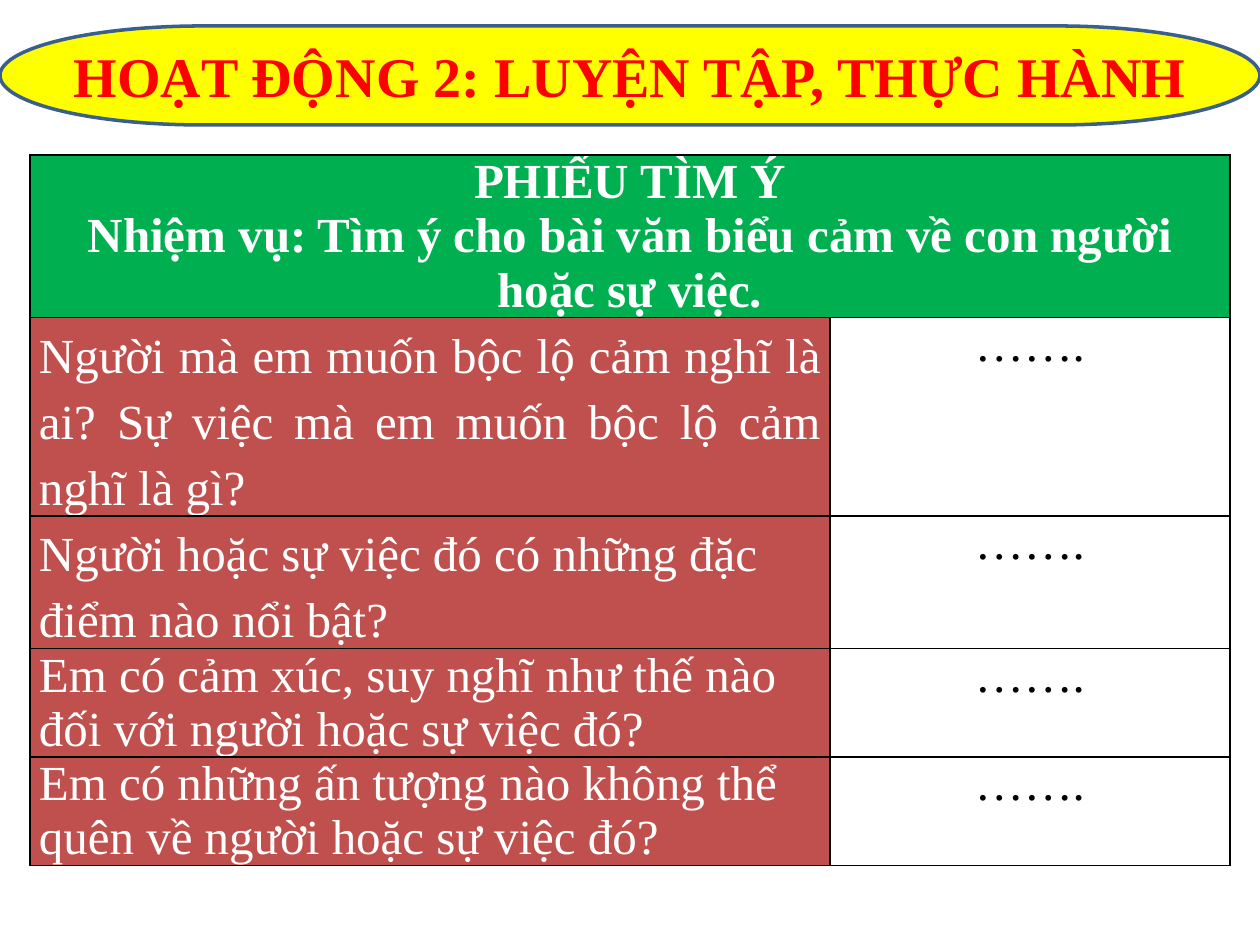
"""Build the idea-finding worksheet slide: a title banner above a question table."""
from lxml.etree import SubElement
from pptx import Presentation
from pptx.dml.color import RGBColor
from pptx.enum.shapes import MSO_SHAPE
from pptx.enum.text import MSO_ANCHOR, PP_ALIGN
from pptx.oxml.ns import qn
from pptx.util import Pt

TITLE = "HOẠT ĐỘNG 2: LUYỆN TẬP, THỰC HÀNH"
HEADING = [
    "PHIẾU TÌM Ý",
    "Nhiệm vụ: Tìm ý cho bài văn biểu cảm về con người hoặc sự việc.",
]
ANSWER = "……."
LOOSE = {"line_spacing": 1.22}
QUESTIONS = [
    ("Người mà em muốn bộc lộ cảm nghĩ là ai? Sự việc mà em muốn bộc lộ cảm nghĩ là gì?",
     {**LOOSE, "alignment": PP_ALIGN.JUSTIFY, "space_after": Pt(10)}),
    ("Người hoặc sự việc đó có những đặc điểm nào nổi bật?", LOOSE),
    ("Em có cảm xúc, suy nghĩ như thế nào đối với người hoặc sự việc đó?", {}),
    ("Em có những ấn tượng nào không thể quên về người hoặc sự việc đó?", {}),
]

THEME = {
    "font": "Times New Roman", "title_size": 32, "table_size": 28,
    "banner": "FFFF00", "banner_line": "3A5F8C", "title": "FF0000",
    "heading": "00B050", "question": "C0504D", "answer": "FFFFFF",
    "light": "FFFFFF", "dark": "000000", "border": "000000",
}
SLIDE = (1260, 945)
BANNER = (0, 26, 1260, 99)
TABLE_LEFT, TABLE_TOP = 30, 155
COLUMNS = [800, 400]
ROWS = [162, 198, 132, 108, 108]
CELL_INSET = 9
CENTERED = {"alignment": PP_ALIGN.CENTER}


def px(length):
    return round(length * 914400 / 126)


def color(role):
    return RGBColor.from_string(THEME[role])


def assign(target, values):
    for name, value in values.items():
        setattr(target, name, value)


def write(frame, lines, size, role, bold, layout):
    for index, line in enumerate(lines):
        paragraph = frame.paragraphs[0] if index == 0 else frame.add_paragraph()
        assign(paragraph, layout)
        run = paragraph.add_run()
        run.text = line
        assign(run.font, {"name": THEME["font"], "size": Pt(THEME[size]), "bold": bold})
        run.font.color.rgb = color(role)


def add_borders(cell):
    properties = cell._tc.get_or_add_tcPr()
    for index, side in enumerate(("lnL", "lnR", "lnT", "lnB")):
        border = properties.makeelement(qn(f"a:{side}"), {"w": str(Pt(1))})
        fill = SubElement(border, qn("a:solidFill"))
        SubElement(fill, qn("a:srgbClr"), val=THEME["border"])
        properties.insert(index, border)


def fill_cell(cell, lines, background, role, bold, layout):
    assign(cell, {
        "margin_left": px(CELL_INSET), "margin_right": px(CELL_INSET),
        "margin_top": 0, "margin_bottom": 0, "vertical_anchor": MSO_ANCHOR.TOP,
    })
    cell.fill.solid()
    cell.fill.fore_color.rgb = color(background)
    write(cell.text_frame, lines, "table_size", role, bold, layout)


def add_banner(slide):
    banner = slide.shapes.add_shape(MSO_SHAPE.FLOWCHART_TERMINATOR, *map(px, BANNER))
    banner.shadow.inherit = False
    banner.fill.solid()
    banner.fill.fore_color.rgb = color("banner")
    banner.line.color.rgb = color("banner_line")
    banner.line.width = Pt(2)
    assign(banner.text_frame, {
        "word_wrap": False, "vertical_anchor": MSO_ANCHOR.MIDDLE,
    })
    write(banner.text_frame, [TITLE], "title_size", "title", True, CENTERED)


def add_worksheet(slide):
    bounds = (TABLE_LEFT, TABLE_TOP, sum(COLUMNS), sum(ROWS))
    worksheet = slide.shapes.add_table(len(ROWS), len(COLUMNS), *map(px, bounds)).table
    assign(worksheet, {"first_row": False, "horz_banding": False})
    for column, width in zip(worksheet.columns, COLUMNS):
        column.width = px(width)
    for row, height in zip(worksheet.rows, ROWS):
        row.height = px(height)
    heading = worksheet.cell(0, 0)
    heading.merge(worksheet.cell(0, 1))
    fill_cell(heading, HEADING, "heading", "light", True, CENTERED)
    for row, (question, layout) in enumerate(QUESTIONS, start=1):
        fill_cell(worksheet.cell(row, 0), [question], "question", "light", False, layout)
        fill_cell(worksheet.cell(row, 1), [ANSWER], "answer", "dark", False, CENTERED)
    for cell in worksheet.iter_cells():
        add_borders(cell)


def main():
    deck = Presentation()
    deck.slide_width, deck.slide_height = map(px, SLIDE)
    slide = deck.slides.add_slide(deck.slide_layouts[6])
    add_banner(slide)
    add_worksheet(slide)
    deck.save("out.pptx")


if __name__ == "__main__":
    main()
